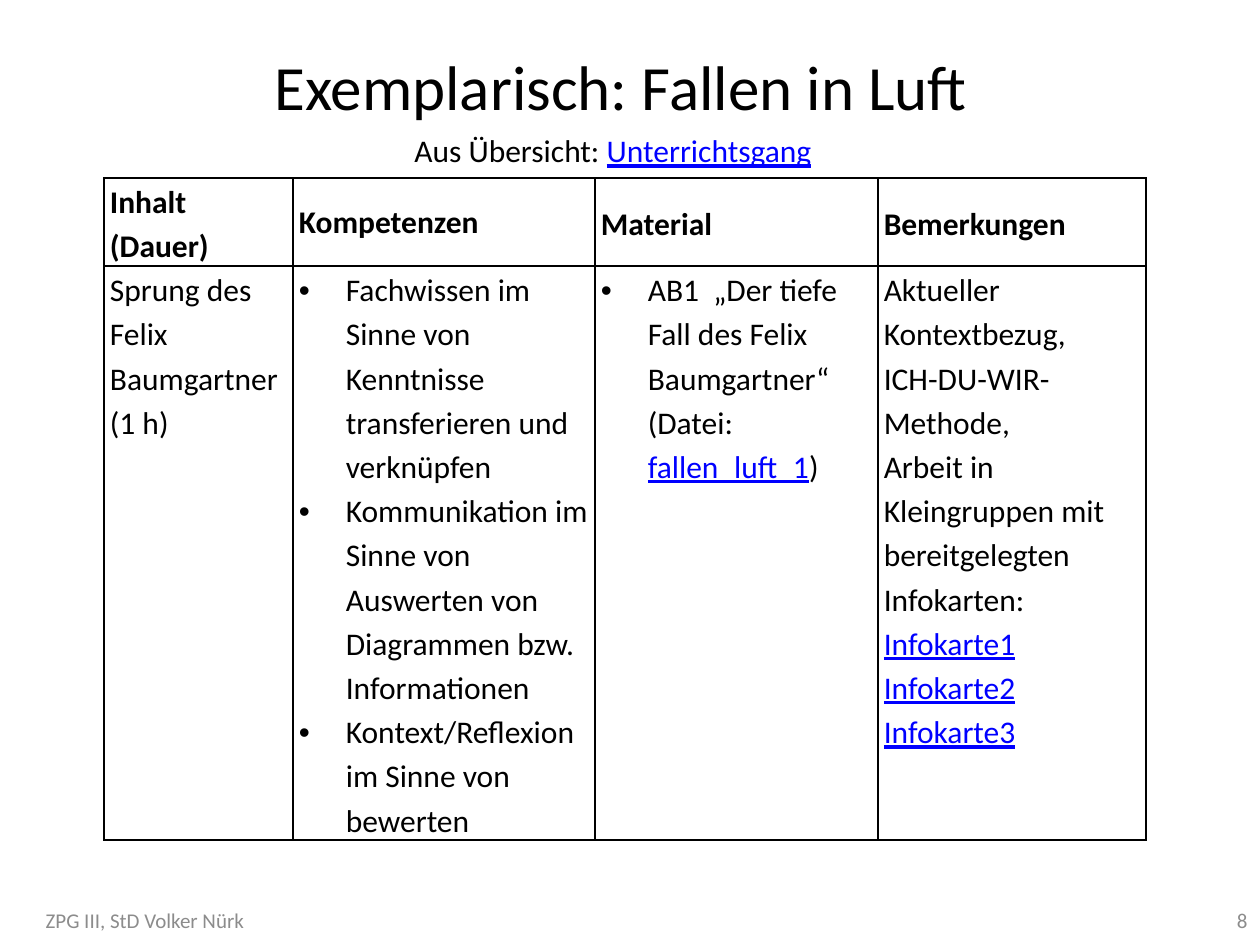
from pptx import Presentation
from pptx.dml.color import RGBColor
from pptx.enum.text import MSO_ANCHOR, PP_ALIGN
from pptx.oxml import parse_xml
from pptx.oxml.ns import nsdecls
from pptx.util import Pt

PX = 914400 // 126
BLACK = RGBColor(0, 0, 0)
WHITE = RGBColor(255, 255, 255)
BLUE = RGBColor(0, 0, 255)
GRAY = RGBColor(0x8C, 0x8C, 0x8C)
LINK = "@"

TITLE = "Exemplarisch: Fallen in Luft"
SOURCE = ("Aus Übersicht: ", "@Unterrichtsgang")
AUTHOR = "ZPG III, StD Volker Nürk"
PAGE = "8"

HEADS = ["Inhalt (Dauer)", "Kompetenzen", "Material", "Bemerkungen"]
BODY = [
    ["Sprung des Felix Baumgartner", "(1 h)"],
    [
        "Fachwissen im Sinne von Kenntnisse transferieren und verknüpfen",
        "Kommunikation im Sinne von Auswerten von Diagrammen bzw. Informationen",
        "Kontext/Reflexion im Sinne von bewerten",
    ],
    [("AB1  „Der tiefe Fall des Felix Baumgartner“ (Datei: ", "@fallen_luft_1", ")")],
    [
        "Aktueller Kontextbezug,",
        "ICH-DU-WIR-Methode,",
        "Arbeit in Kleingruppen mit bereitgelegten Infokarten:",
        "@Infokarte1",
        "@Infokarte2",
        "@Infokarte3",
    ],
]
LISTS = {1, 2}
COLS = [189, 302, 283, 268]
ROWS = [88, 574]
LEFT, TOP = 104, 178
INDENT = 47


def write(frame, paras, size=18, color=BLACK, bold=False, align=PP_ALIGN.LEFT,
          space=1.0, bullet=False):
    for i, parts in enumerate(paras):
        para = frame.add_paragraph() if i else frame.paragraphs[0]
        para.alignment = align
        para.line_spacing = space
        if bullet:
            props = para._p.get_or_add_pPr()
            props.set("marL", str(INDENT * PX))
            props.set("indent", str(-INDENT * PX))
            props.append(parse_xml(f'<a:buFont {nsdecls("a")} typeface="Arial"/>'))
            props.append(parse_xml(f'<a:buChar {nsdecls("a")} char="•"/>'))
        for part in [parts] if isinstance(parts, str) else parts:
            link = part.startswith(LINK)
            run = para.add_run()
            run.text = part.removeprefix(LINK)
            font = run.font
            font.name, font.size, font.bold = "Calibri", Pt(size), bold
            font.underline = link
            font.color.rgb = BLUE if link else color


def add_text(slide, box, parts, anchor=MSO_ANCHOR.MIDDLE, **form):
    frame = slide.shapes.add_textbox(*(n * PX for n in box)).text_frame
    frame.word_wrap = True
    frame.vertical_anchor = anchor
    write(frame, [parts], **form)


def style(cell):
    cell.margin_left = cell.margin_right = 6 * PX
    cell.margin_top = cell.margin_bottom = 0
    props = cell._tc.get_or_add_tcPr()
    for side in "LRTB":
        props.append(parse_xml(
            f'<a:ln{side} {nsdecls("a")} w="{Pt(1)}"><a:solidFill>'
            f'<a:srgbClr val="{BLACK}"/></a:solidFill></a:ln{side}>'))
    cell.fill.solid()
    cell.fill.fore_color.rgb = WHITE


def add_grid(slide):
    table = slide.shapes.add_table(
        len(ROWS), len(COLS), LEFT * PX, TOP * PX,
        sum(COLS) * PX, sum(ROWS) * PX).table
    table.first_row = table.horz_banding = False
    for row, high in zip(table.rows, ROWS):
        row.height = high * PX
    for i, wide in enumerate(COLS):
        table.columns[i].width = wide * PX
        head, body = table.cell(0, i), table.cell(1, i)
        style(head)
        style(body)
        head.vertical_anchor = MSO_ANCHOR.MIDDLE
        write(head.text_frame, [HEADS[i]], bold=True, space=1.15)
        write(body.text_frame, BODY[i], space=1.15, bullet=i in LISTS)
    skill = table.cell(0, 1)
    skill.vertical_anchor = MSO_ANCHOR.TOP
    skill.margin_top = 20 * PX


def main():
    deck = Presentation()
    deck.slide_width, deck.slide_height = 1260 * PX, 945 * PX
    slide = deck.slides.add_slide(deck.slide_layouts[6])
    add_text(slide, (54, 26, 1134, 118), TITLE, size=36, align=PP_ALIGN.CENTER)
    add_grid(slide)
    add_text(slide, (0, 895, 290, 50), AUTHOR, size=12, color=GRAY,
             align=PP_ALIGN.CENTER)
    add_text(slide, (966, 895, 294, 50), PAGE, size=12, color=GRAY,
             align=PP_ALIGN.RIGHT)
    add_text(slide, (402, 125, 446, 50), SOURCE, anchor=MSO_ANCHOR.TOP)
    deck.save("out.pptx")


if __name__ == "__main__":
    main()
